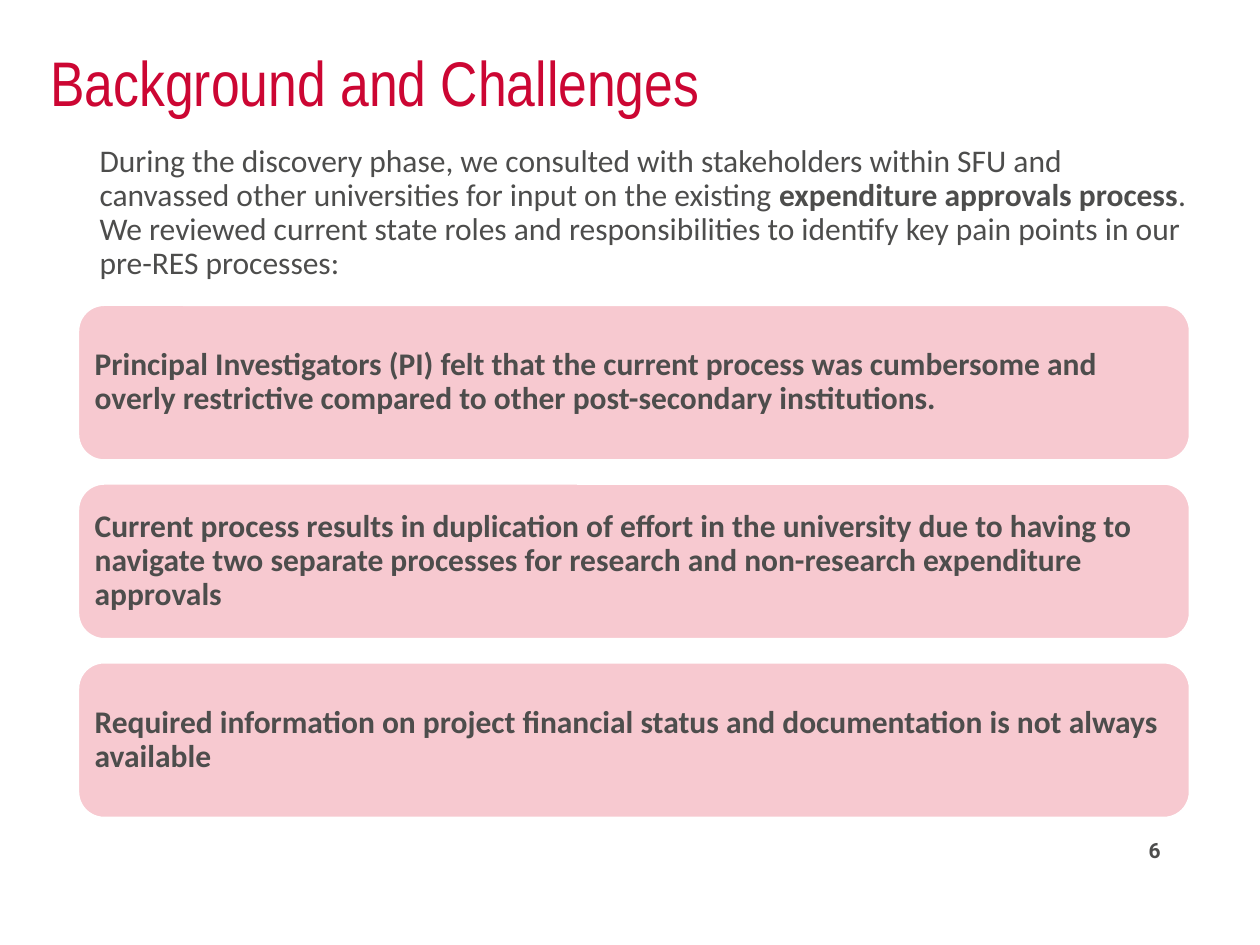
from dataclasses import dataclass

from lxml import etree
from pptx import Presentation
from pptx.dml.color import RGBColor
from pptx.enum.shapes import MSO_SHAPE
from pptx.enum.text import MSO_ANCHOR, MSO_AUTO_SIZE, PP_ALIGN
from pptx.oxml.ns import qn
from pptx.util import Pt

ROUND = MSO_SHAPE.ROUNDED_RECTANGLE
TOP, MIDDLE = MSO_ANCHOR.TOP, MSO_ANCHOR.MIDDLE
LEFT, RIGHT = PP_ALIGN.LEFT, PP_ALIGN.RIGHT
FIXED = MSO_AUTO_SIZE.NONE


@dataclass(frozen=True)
class Theme:
    red: RGBColor = RGBColor(0xCC, 0x06, 0x33)
    pink: RGBColor = RGBColor(0xF7, 0xC9, 0xD0)
    grey: RGBColor = RGBColor(0x4D, 0x4D, 0x4C)
    white: RGBColor = RGBColor(0xFF, 0xFF, 0xFF)
    head_font: str = "Arial Narrow"
    text_font: str = "Calibri"
    page_font: str = "Roboto"
    head_size: int = 36
    text_size: int = 18
    page_size: int = 12


THEME = Theme()

TITLE = "Background and Challenges"
INTRO = [
    ("During the discovery phase, we consulted with stakeholders within SFU "
     "and canvassed other universities for input on the existing ", False),
    ("expenditure approvals process", True),
    (". We reviewed current state roles and responsibilities to identify key "
     "pain points in our pre-RES processes:", False),
]
POINTS = [
    "Principal Investigators (PI) felt that the current process was cumbersome "
    "and overly restrictive compared to other post-secondary institutions.",
    "Current process results in duplication of effort in the university due to "
    "having to navigate two separate processes for research and non-research "
    "expenditure approvals",
    "Required information on project financial status and documentation is not "
    "always available",
]


def place(shape, box):
    shape.left, shape.top, shape.width, shape.height = map(Pt, box)


def write(shape, runs, font, size, color, anchor=TOP, align=LEFT, lead=0.9):
    """Fill the shape's first paragraph with (text, bold) runs."""
    frame = shape.text_frame
    frame.word_wrap = True
    frame.auto_size = FIXED
    frame.vertical_anchor = anchor
    para = frame.paragraphs[0]
    para.alignment = align
    para.line_spacing = lead
    para.space_before = Pt(0)
    for text, bold in runs:
        run = para.add_run()
        run.text = text
        run.font.name = font
        run.font.size = Pt(size)
        run.font.bold = bold
        run.font.color.rgb = color


def add_title(slide, box):
    title = slide.shapes.title
    place(title, box)
    write(title, [(TITLE, False)], THEME.head_font, THEME.head_size, THEME.red)


def add_intro(slide, box):
    body = slide.placeholders[1]
    place(body, box)
    props = body.text_frame.paragraphs[0]._p.get_or_add_pPr()
    props.set("marL", str(Pt(14.4)))
    props.set("indent", "0")
    etree.SubElement(props, qn("a:buNone"))
    write(body, INTRO, THEME.text_font, THEME.text_size, THEME.grey)


def add_card(slide, text, box):
    card = slide.shapes.add_shape(ROUND, *map(Pt, box))
    card.shadow.inherit = False
    card.fill.solid()
    card.fill.fore_color.rgb = THEME.pink
    card.line.color.rgb = THEME.white
    card.line.width = Pt(1)
    frame = card.text_frame
    frame.margin_left = frame.margin_right = Pt(5)
    frame.margin_top = frame.margin_bottom = Pt(5)
    write(card, [(text, True)], THEME.text_font, THEME.text_size, THEME.grey,
          MIDDLE)


def add_cards(slide, box, gap):
    """Stack equal cards down the box."""
    left, top, width, height = box
    count = len(POINTS)
    tall = (height - gap * (count - 1)) / count
    for row, text in enumerate(POINTS):
        add_card(slide, text, (left, top + row * (tall + gap), width, tall))


def add_page(slide, box):
    page = slide.shapes.add_textbox(*map(Pt, box))
    write(page, [("6", True)], THEME.page_font, THEME.page_size, THEME.grey,
          MIDDLE, RIGHT, 1.0)


def main():
    deck = Presentation()
    deck.slide_width, deck.slide_height = Pt(720), Pt(540)
    slide = deck.slides.add_slide(deck.slide_layouts[1])
    add_title(slide, (21.6, 25.9, 676.8, 81.4))
    add_cards(slide, (44.8, 174.4, 635, 292.8), 13.6)
    add_intro(slide, (35.3, 79.2, 653.8, 88.6))
    add_page(slide, (475.2, 471.6, 195.1, 28.8))
    deck.save("out.pptx")


if __name__ == "__main__":
    main()
